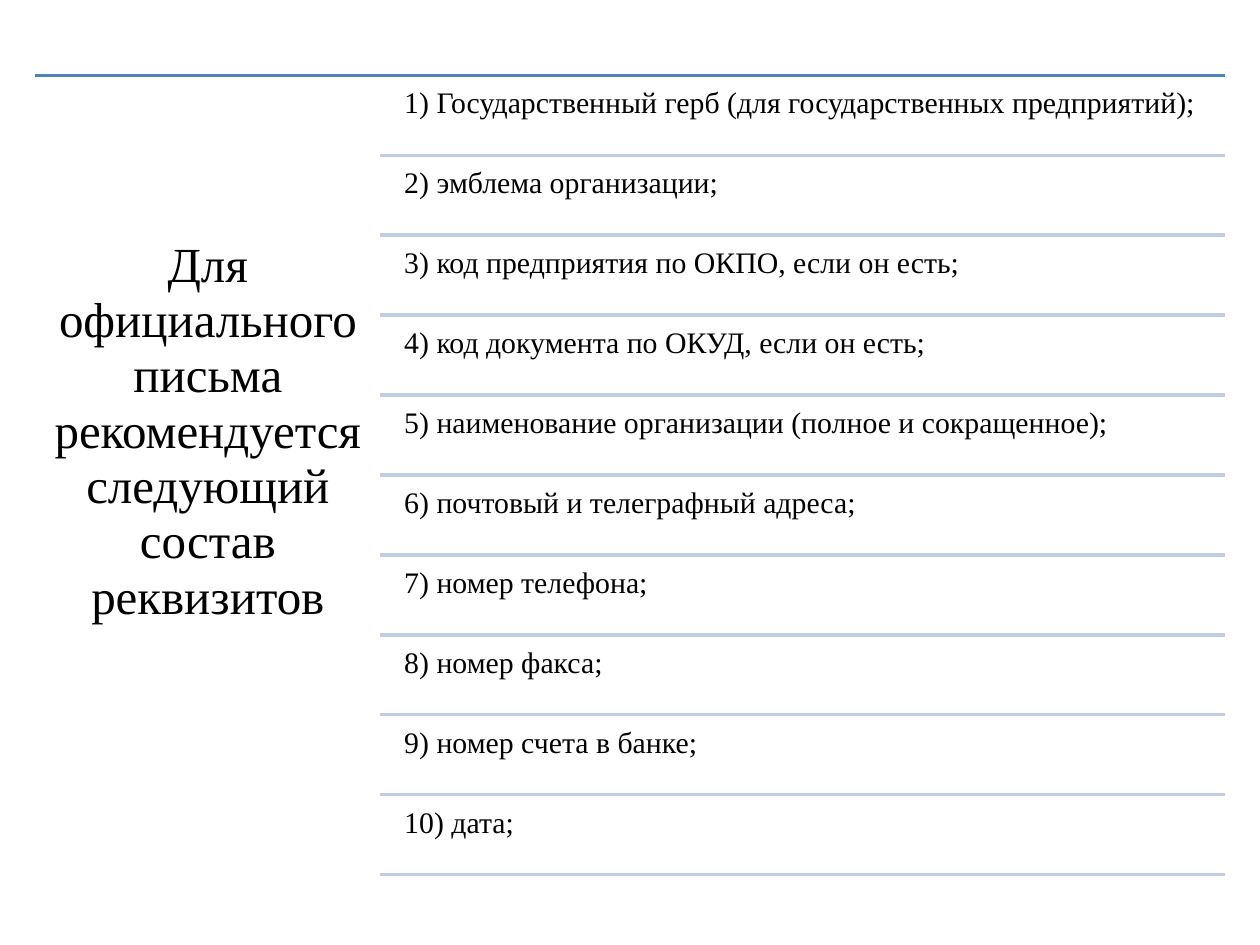
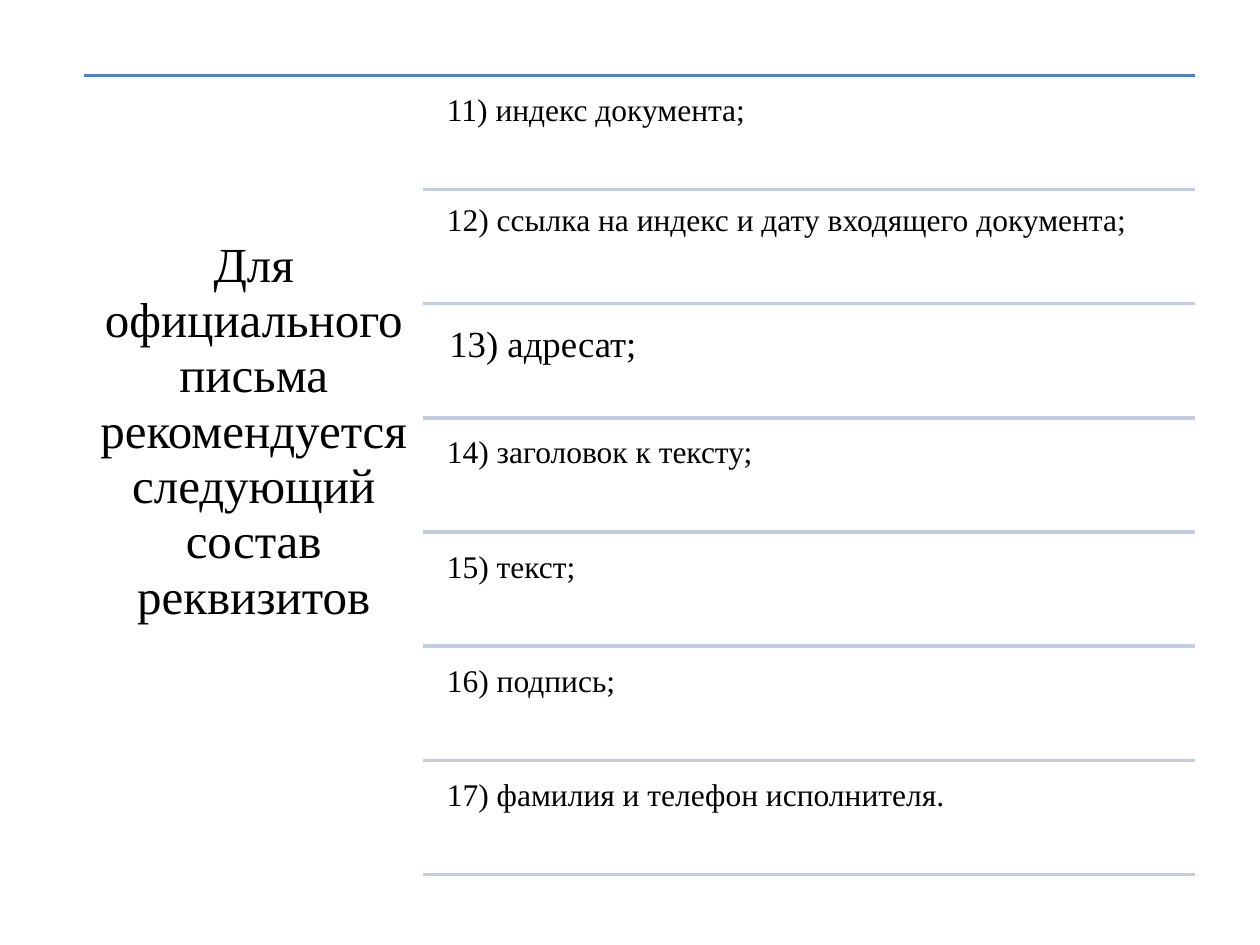
from lxml import etree
from pptx import Presentation
from pptx.dml.color import RGBColor
from pptx.enum import shapes, text
from pptx.oxml import ns
from pptx.util import Cm, Pt

HUES = {"top": "4F81BD", "rule": "C2CDE1", "ink": "000000"}
FACE = "Times New Roman"
HEAD = "Для официального письма рекомендуется следующий состав реквизитов"
TOP, TALL = 1.52, 16.11  # list area, cm
GAP = 0.3  # item indent from the start of its rule, cm

# left edge, heading width and right edge in cm; text size; items
PAGES = [
    (0.71, 6.96, 24.69, 17, [
        "1) Государственный герб (для государственных предприятий);",
        "2) эмблема организации;",
        "3) код предприятия по ОКПО, если он есть;",
        "4) код документа по ОКУД, если он есть;",
        "5) наименование организации (полное и сокращенное);",
        "6) почтовый и телеграфный адреса;",
        "7) номер телефона;",
        "8) номер факса;",
        "9) номер счета в банке;",
        "10) дата;",
    ]),
    (1.7, 6.83, 24.09, 18, [
        "11) индекс документа;",
        "12) ссылка на индекс и дату входящего документа;",
        "13) адресат;",
        "14) заголовок к тексту;",
        "15) текст;",
        "16) подпись;",
        "17) фамилия и телефон исполнителя.",
    ]),
]
LARGE = {"13) адресат;": 21}
TIGHT = set(PAGES[0][4]) | {"12) ссылка на индекс и дату входящего документа;"}


def rule(slide, x1, x2, y, hue):
    """Draw a horizontal line without a shadow."""
    line = slide.shapes.add_connector(
        shapes.MSO_CONNECTOR.STRAIGHT, Cm(x1), Cm(y), Cm(x2), Cm(y))
    line.line.color.rgb = RGBColor.from_string(HUES[hue])
    line.line.width = Pt(2)
    etree.SubElement(line._element.spPr, ns.qn("a:effectLst"))


def label(slide, words, box, size, pad, lead):
    """Add a text box, with box and pad in cm, and return its frame."""
    frame = slide.shapes.add_textbox(*map(Cm, box)).text_frame
    frame.word_wrap = True
    frame.margin_left = frame.margin_right = Cm(pad)
    frame.margin_top = frame.margin_bottom = Cm(pad)
    para = frame.paragraphs[0]
    para.text = words
    para.line_spacing = lead
    para.font.name = FACE
    para.font.size = Pt(size)
    para.font.color.rgb = RGBColor.from_string(HUES["ink"])
    return frame


deck = Presentation()
deck.slide_width, deck.slide_height = Cm(25.4), Cm(19.05)

for left, wide, right, size, items in PAGES:
    slide = deck.slides.add_slide(deck.slide_layouts[6])
    rule(slide, left, right, TOP, "top")

    head = label(slide, HEAD, (left, TOP, wide, TALL + 0.1), 28, 0.3, 0.94)
    head.margin_top = Cm(3.28)
    head.paragraphs[0].alignment = text.PP_ALIGN.CENTER

    start = left + wide
    step = TALL / len(items)
    high = 0.95 * step
    for row, item in enumerate(items, 1):
        base = TOP + row * step
        big = LARGE.get(item, size)
        box = (start + GAP, base - high, right - start - GAP, high)
        label(slide, item, box, big, 0.23 if big > size else 0.18,
              0.9 if item in TIGHT else 1.0)
        rule(slide, start, right, base, "rule")

deck.save("out.pptx")
